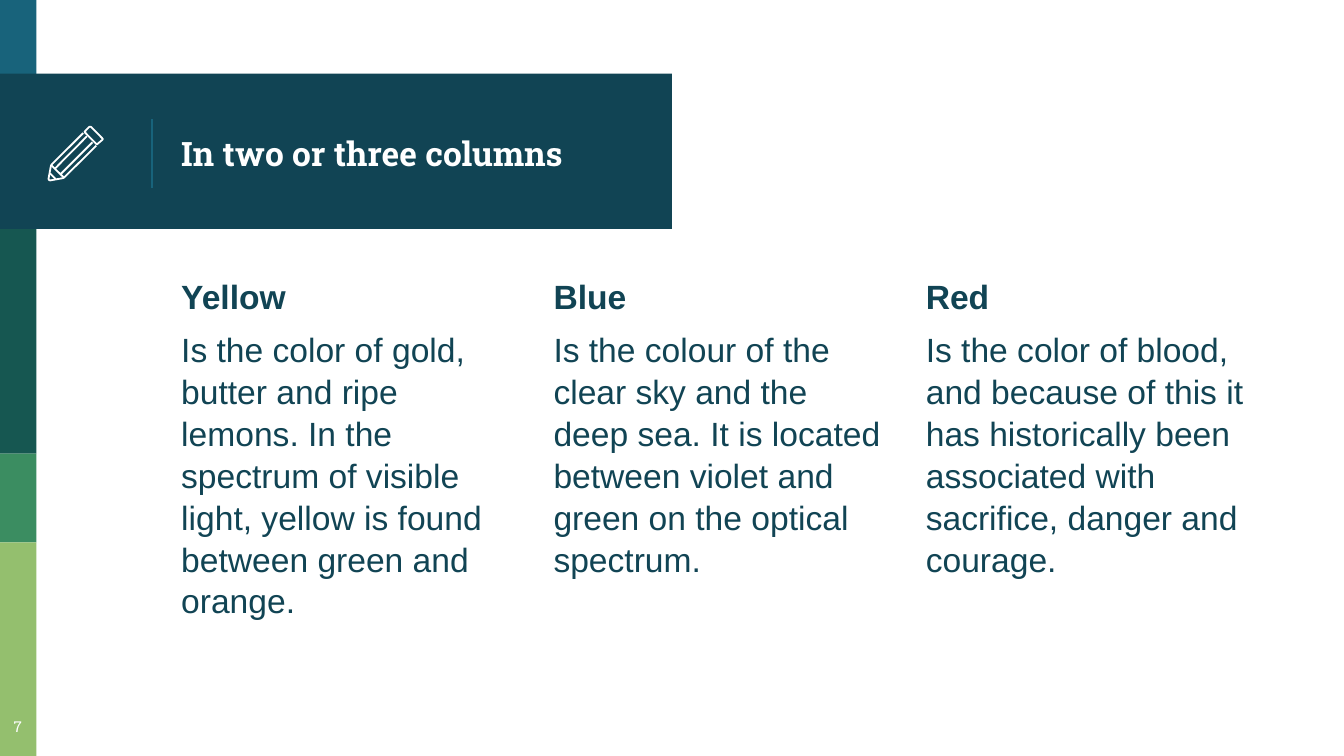
import dataclasses
import typing

import lxml.etree
import pptx
import pptx.dml.color
import pptx.enum.shapes
import pptx.enum.text
import pptx.util

Pt = pptx.util.Pt
Align = pptx.enum.text.PP_ALIGN
Anchor = pptx.enum.text.MSO_ANCHOR
Point = tuple[float, float]

NAVY, TEAL, WHITE = "114454", "18637B", "FFFFFF"
SLAB, SANS = "Roboto Slab", "Arial"
INSET = 7.2


@dataclasses.dataclass
class Box:
    left: float
    top: float
    width: float
    height: float

    def size(self) -> list[int]:
        return [Pt(n) for n in (self.left, self.top, self.width, self.height)]


@dataclasses.dataclass
class Band:
    box: Box
    fill: str


@dataclasses.dataclass
class Column:
    head: str
    body: str


@dataclasses.dataclass
class Stroke:
    points: list[Point]
    closed: bool = False


BANDS = [
    Band(Box(0, 0, 19.5, 42), TEAL),
    Band(Box(0, 39.5, 360, 83.2), NAVY),
    Band(Box(0, 122.7, 19.5, 120.3), "165751"),
    Band(Box(0, 243, 19.5, 47.6), "3B8D61"),
    Band(Box(0, 290.6, 19.5, 114.4), "94BF6E"),
]

COLUMNS = [
    Column("Yellow", "Is the color of gold, butter and ripe lemons. In the spectrum "
           "of visible light, yellow is found between green and orange."),
    Column("Blue", "Is the colour of the clear sky and the deep sea. It is located "
           "between violet and green on the optical spectrum."),
    Column("Red", "Is the color of blood, and because of this it has historically "
           "been associated with sacrifice, danger and courage."),
]
FIRST, STEP = 90, 199.45

PENCIL = [
    Stroke([(54.9, 74.2), (49.2, 68.4), (48.6, 67.9), (48, 67.9), (47.4, 68.4),
            (45.2, 70.7), (51.9, 77.4), (54.9, 74.9), (55.1, 74.5)], True),
    Stroke([(49.5, 76.3), (32.5, 93.3)]),
    Stroke([(44.6, 71.3), (27.6, 88.3), (27.3, 88.9), (26, 95.8), (26.2, 96.4),
            (26.9, 96.7), (33.7, 95.5), (34.4, 95.1), (51.6, 78.1)]),
    Stroke([(29.6, 90.2), (46.6, 73)]),
    Stroke([(29.9, 96), (26.8, 92.9)]),
    Stroke([(27.4, 88.4), (34.4, 95.3)]),
]


def hue(code: str) -> pptx.dml.color.RGBColor:
    return pptx.dml.color.RGBColor.from_string(code)


def apply(target: typing.Any, **values: typing.Any) -> None:
    for name, value in values.items():
        setattr(target, name, value)


def draw_band(shapes: typing.Any, band: Band) -> None:
    kind = pptx.enum.shapes.MSO_SHAPE.RECTANGLE
    shape = shapes.add_shape(kind, *band.box.size())
    shape.shadow.inherit = False
    shape.fill.solid()
    shape.fill.fore_color.rgb = hue(band.fill)
    shape.line.fill.background()


def draw_rule(shapes: typing.Any, start: Point, end: Point) -> None:
    kind = pptx.enum.shapes.MSO_CONNECTOR.STRAIGHT
    rule = shapes.add_connector(kind, *[Pt(n) for n in (*start, *end)])
    rule.line.width = Pt(0.75)
    rule.line.color.rgb = hue(TEAL)
    tag = pptx.oxml.ns.qn("a:effectLst")
    lxml.etree.SubElement(rule._element.spPr, tag)


def draw_stroke(shapes: typing.Any, stroke: Stroke) -> None:
    first, *rest = [(Pt(x), Pt(y)) for x, y in stroke.points]
    pen = shapes.build_freeform(*first)
    pen.add_line_segments(rest, close=stroke.closed)
    shape = pen.convert_to_shape()
    shape.shadow.inherit = False
    shape.fill.background()
    shape.line.width = Pt(0.96)
    shape.line.color.rgb = hue(WHITE)


def add_frame(shapes: typing.Any, box: Box, anchor: Anchor = Anchor.TOP) -> typing.Any:
    frame = shapes.add_textbox(*box.size()).text_frame
    sides = ("left", "top", "right", "bottom")
    apply(frame, word_wrap=True, vertical_anchor=anchor,
          **{f"margin_{side}": Pt(INSET) for side in sides})
    return frame


def write(para: typing.Any, text: str, face: str, size: float, color: str,
          bold: bool = False, **layout: typing.Any) -> None:
    apply(para, **layout)
    run = para.add_run()
    run.text = text
    apply(run.font, name=face, size=Pt(size), bold=bold)
    run.font.color.rgb = hue(color)


def draw_column(shapes: typing.Any, left: float, column: Column) -> None:
    frame = add_frame(shapes, Box(left, 139.7, 190, 248.4))
    layout = {"space_before": Pt(6), "line_spacing": 1.04}
    write(frame.paragraphs[0], column.head, SANS, 18, NAVY, True, **layout)
    write(frame.add_paragraph(), column.body, SANS, 18, NAVY, **layout)


def main() -> None:
    deck = pptx.Presentation()
    apply(deck, slide_width=Pt(720), slide_height=Pt(405))
    shapes = deck.slides.add_slide(deck.slide_layouts[6]).shapes

    for band in BANDS:
        draw_band(shapes, band)
    draw_rule(shapes, (81.5, 64), (81.5, 100.5))

    title = add_frame(shapes, Box(FIRST, 41.8, 252.7, 80.6), Anchor.MIDDLE)
    write(title.paragraphs[0], "In two or three columns", SLAB, 18, WHITE, True)

    for index, column in enumerate(COLUMNS):
        draw_column(shapes, FIRST + index * STEP, column)

    icon = shapes.add_group_shape().shapes
    for stroke in PENCIL:
        draw_stroke(icon, stroke)

    number = add_frame(shapes, Box(-4, 379.5, 27, 25.5))
    write(number.paragraphs[0], "7", SLAB, 8, WHITE, alignment=Align.CENTER)

    deck.save("out.pptx")


if __name__ == "__main__":
    main()
